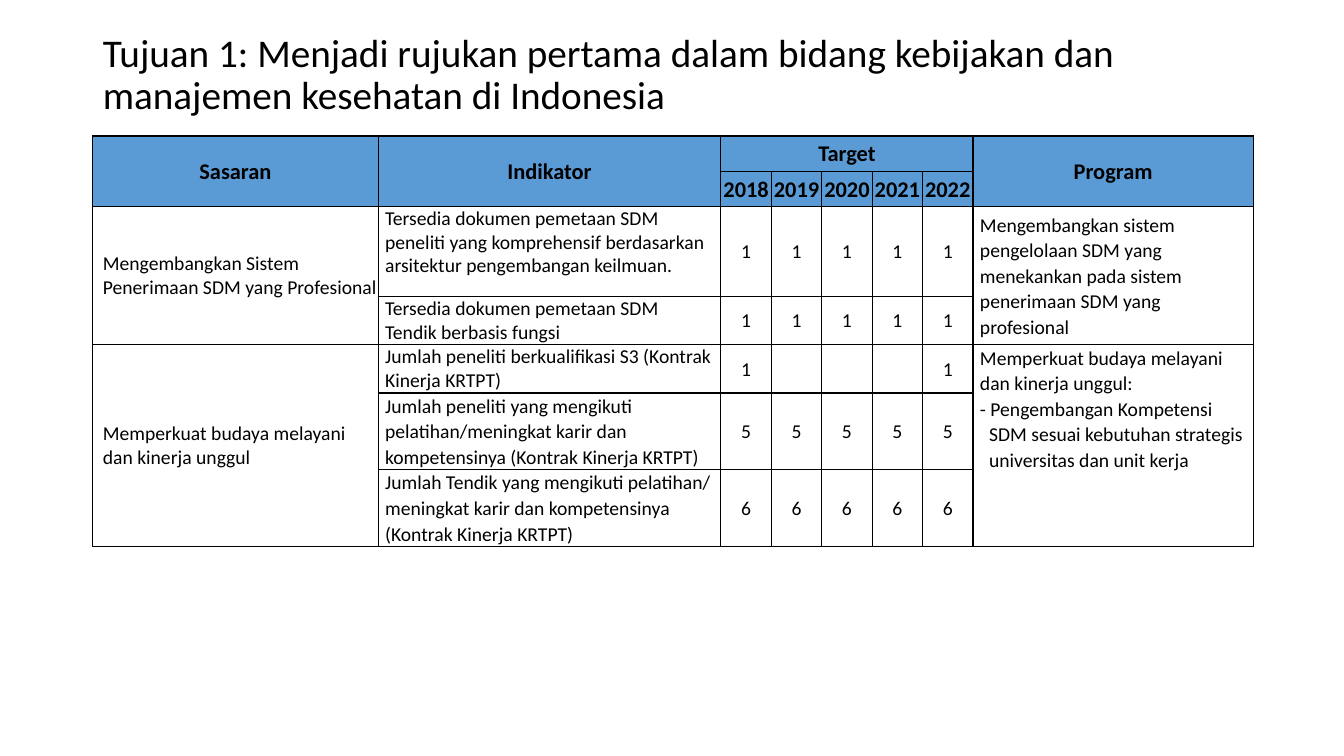
from dataclasses import dataclass

from lxml import etree
from pptx import Presentation
from pptx.dml.color import RGBColor
from pptx.enum.text import MSO_ANCHOR, MSO_AUTO_SIZE, PP_ALIGN
from pptx.oxml.ns import qn
from pptx.util import Inches, Pt

TOP, MIDDLE = MSO_ANCHOR.TOP, MSO_ANCHOR.MIDDLE
LEFT, CENTER = PP_ALIGN.LEFT, PP_ALIGN.CENTER

TITLE = ("Tujuan 1: Menjadi rujukan pertama dalam bidang kebijakan dan "
         "manajemen kesehatan di Indonesia")
YEARS = ["2018", "2019", "2020", "2021", "2022"]
# Each goal: aim, indicators, program lines, program anchor, space after.
# Each indicator: text, yearly targets, anchor, line spacing, row height.
GOALS = [
    {
        "aim": "Mengembangkan Sistem Penerimaan SDM yang Profesional",
        "indicators": [
            ("Tersedia dokumen pemetaan SDM peneliti yang komprehensif "
             "berdasarkan arsitektur pengembangan keilmuan.",
             ["1"] * 5, TOP, 1.0, 0.89),
            ("Tersedia dokumen pemetaan SDM Tendik berbasis fungsi",
             ["1"] * 5, MIDDLE, 1.0, 0.48),
        ],
        "program": ["Mengembangkan sistem pengelolaan SDM yang menekankan pada "
                    "sistem penerimaan SDM yang profesional"],
        "program_anchor": MIDDLE,
        "space_after": 8,
    },
    {
        "aim": "Memperkuat budaya melayani dan kinerja unggul",
        "indicators": [
            ("Jumlah peneliti berkualifikasi S3 (Kontrak Kinerja KRTPT)",
             ["1", "", "", "", "1"], MIDDLE, 1.0, 0.48),
            ("Jumlah peneliti yang mengikuti pelatihan/meningkat karir dan "
             "kompetensinya (Kontrak Kinerja KRTPT)",
             ["5"] * 5, TOP, 1.07, 0.76),
            ("Jumlah Tendik yang mengikuti pelatihan/ meningkat karir dan "
             "kompetensinya (Kontrak Kinerja KRTPT)",
             ["6"] * 5, TOP, 1.07, 0.76),
        ],
        "program": ["Memperkuat budaya melayani dan kinerja unggul:",
                    "- Pengembangan Kompetensi SDM sesuai kebutuhan strategis "
                    "universitas dan unit kerja"],
        "program_anchor": TOP,
        "space_after": 0,
    },
]


@dataclass(frozen=True)
class Theme:
    font: str = "Calibri"
    ink: str = "000000"
    header: str = "5B9BD5"
    body: str = "FFFFFF"
    title_size: int = 28
    header_size: int = 16
    body_size: int = 14
    border: float = 1


THEME = Theme()
COLUMN_WIDTHS = [2.83, 3.4] + [0.5] * len(YEARS) + [2.78]
HEADER_HEIGHT = 0.35
AIM, INDICATOR, FIRST_YEAR = 0, 1, 2
PROGRAM = FIRST_YEAR + len(YEARS)
TIGHT, PADDED = (0.01, 0.01, 0.01, 0), (0.07, 0, 0.07, 0)


def write(frame, *lines, size=THEME.body_size, bold=False, align=LEFT,
          line_spacing=1.0, space_after=0, margin=0, hanging=0):
    """Fill a text frame; dash lines get the hanging indent."""
    for number, line in enumerate(lines):
        paragraph = frame.add_paragraph() if number else frame.paragraphs[0]
        indent = hanging if line.startswith("- ") else 0
        properties = paragraph._p.get_or_add_pPr()
        properties.set("marL", str(Inches(margin + indent)))
        properties.set("indent", str(Inches(-indent)))
        paragraph.alignment = align
        paragraph.line_spacing = line_spacing
        paragraph.space_before = Pt(0)
        paragraph.space_after = Pt(space_after)
        if not line:
            paragraph.font.size = Pt(size)
            continue
        run = paragraph.add_run()
        run.text = line
        run.font.name = THEME.font
        run.font.size = Pt(size)
        run.font.bold = bold
        run.font.color.rgb = RGBColor.from_string(THEME.ink)


def add_borders(cell):
    properties = cell._tc.get_or_add_tcPr()
    for position, side in enumerate(("lnL", "lnR", "lnT", "lnB")):
        line = etree.Element(qn(f"a:{side}"), w=str(Pt(THEME.border)))
        fill = etree.SubElement(line, qn("a:solidFill"))
        etree.SubElement(fill, qn("a:srgbClr"), val=THEME.ink)
        properties.insert(position, line)


def fill_cell(cell, *lines, insets=TIGHT, anchor=MIDDLE, **text_format):
    cell.margin_left, cell.margin_top, cell.margin_right, cell.margin_bottom = (
        Inches(inset) for inset in insets)
    cell.vertical_anchor = anchor
    write(cell.text_frame, *lines, **text_format)


def add_title(slide):
    title = slide.shapes.title
    title.left, title.top = Inches(0.92), Inches(0.4)
    title.width, title.height = Inches(11.18), Inches(0.71)
    title.text_frame.word_wrap = True
    title.text_frame.auto_size = MSO_AUTO_SIZE.NONE
    title.text_frame.vertical_anchor = MIDDLE
    write(title.text_frame, TITLE, size=THEME.title_size, line_spacing=0.9)


def add_target_table(slide):
    heights = [HEADER_HEIGHT] * 2 + [
        indicator[-1] for goal in GOALS for indicator in goal["indicators"]]
    table = slide.shapes.add_table(
        len(heights), len(COLUMN_WIDTHS), Inches(0.92), Inches(1.35),
        Inches(sum(COLUMN_WIDTHS)), Inches(sum(heights))).table
    table.first_row = table.horz_banding = False
    for column, width in zip(table.columns, COLUMN_WIDTHS):
        column.width = Inches(width)
    for number, (row, height) in enumerate(zip(table.rows, heights)):
        row.height = Inches(height)
        for cell in row.cells:
            cell.fill.solid()
            cell.fill.fore_color.rgb = RGBColor.from_string(
                THEME.header if number < 2 else THEME.body)
            add_borders(cell)
    return table


def fill_header(table):
    header = {"size": THEME.header_size, "bold": True, "align": CENTER}
    for column, label in ((AIM, "Sasaran"), (INDICATOR, "Indikator"),
                          (PROGRAM, "Program")):
        table.cell(0, column).merge(table.cell(1, column))
        fill_cell(table.cell(0, column), label, **header)
    table.cell(0, FIRST_YEAR).merge(table.cell(0, PROGRAM - 1))
    fill_cell(table.cell(0, FIRST_YEAR), "Target", **header)
    for column, year in enumerate(YEARS, FIRST_YEAR):
        fill_cell(table.cell(1, column), year, **header)


def fill_goals(table):
    first = 2
    for goal in GOALS:
        last = first + len(goal["indicators"]) - 1
        for column in (AIM, PROGRAM):
            table.cell(first, column).merge(table.cell(last, column))
        fill_cell(table.cell(first, AIM), goal["aim"], margin=0.09)
        fill_cell(table.cell(first, PROGRAM), *goal["program"], insets=PADDED,
                  anchor=goal["program_anchor"], line_spacing=1.07,
                  space_after=goal["space_after"], hanging=0.09)
        for row, indicator in enumerate(goal["indicators"], first):
            text, targets, anchor, spacing, _ = indicator
            fill_cell(table.cell(row, INDICATOR), text, insets=PADDED,
                      anchor=anchor, line_spacing=spacing)
            for column, target in enumerate(targets, FIRST_YEAR):
                fill_cell(table.cell(row, column), target, align=CENTER)
        first = last + 1


def main():
    presentation = Presentation()
    presentation.slide_width = Inches(13.33)
    presentation.slide_height = Inches(7.5)
    slide = presentation.slides.add_slide(presentation.slide_layouts[5])
    add_title(slide)
    table = add_target_table(slide)
    fill_header(table)
    fill_goals(table)
    presentation.save("out.pptx")


if __name__ == "__main__":
    main()
